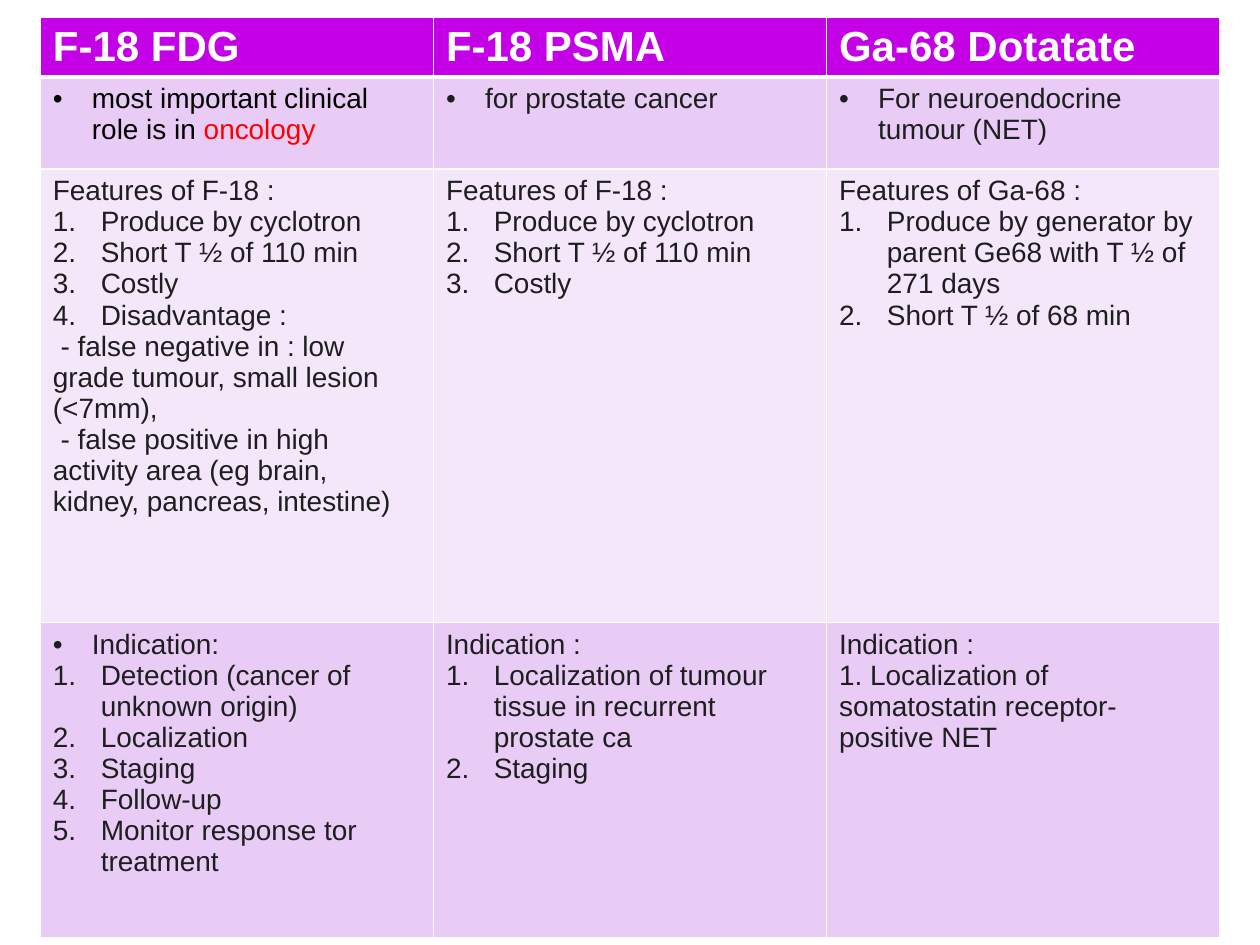
import pptx
import pptx.dml.color
import pptx.enum.text
import pptx.oxml.ns
import pptx.util
from lxml import etree

Inches = pptx.util.Inches
Pt = pptx.util.Pt
RGBColor = pptx.dml.color.RGBColor

WHITE = RGBColor(0xFF, 0xFF, 0xFF)
BLACK = RGBColor(0, 0, 0)
RED = RGBColor(0xFF, 0, 0)
INK = RGBColor(0x1E, 0x1E, 0x20)
PURPLE = RGBColor(0xC3, 0x00, 0xE6)
LILAC = RGBColor(0xE9, 0xCC, 0xF5)
PALE_LILAC = RGBColor(0xF5, 0xE7, 0xFA)

COLUMN_WIDTH = Inches(3.12)
ROW_HEIGHTS = [Inches(height) for height in (0.46, 0.73, 3.6, 2.5)]
ROW_FILLS = [PURPLE, LILAC, PALE_LILAC, LILAC]
MARKERS = {
    "bullet": (Inches(0.31), "buChar", {"char": "•"}),
    "number": (Inches(0.38), "buAutoNum", {"type": "arabicPeriod"}),
}

TRACERS = ["F-18 FDG", "F-18 PSMA", "Ga-68 Dotatate"]
F18_FEATURES = [
    ("plain", "Features of F-18 :"),
    ("number", "Produce by cyclotron"),
    ("number", "Short T ½ of 110 min"),
    ("number", "Costly"),
]
ROLES = [
    [("bullet", [("most important clinical role is in ", BLACK), ("oncology", RED)])],
    [("bullet", "for prostate cancer")],
    [("bullet", "For neuroendocrine tumour (NET)")],
]
FEATURES = [
    F18_FEATURES + [
        ("number", "Disadvantage :"),
        ("plain", " - false negative in : low grade tumour, small lesion (<7mm),"),
        ("plain", " - false positive in high activity area "
                  "(eg brain, kidney, pancreas, intestine)"),
    ],
    F18_FEATURES,
    [
        ("plain", "Features of Ga-68 :"),
        ("number", "Produce by generator by parent Ge68 with T ½ of 271 days"),
        ("number", "Short T ½ of 68 min"),
    ],
]
INDICATIONS = [
    [
        ("bullet", "Indication:"),
        ("number", "Detection (cancer of unknown origin)"),
        ("number", "Localization"),
        ("number", "Staging"),
        ("number", "Follow-up"),
        ("number", "Monitor response tor treatment"),
    ],
    [
        ("plain", "Indication :"),
        ("number", "Localization of tumour tissue in recurrent prostate ca"),
        ("number", "Staging"),
    ],
    [
        ("plain", "Indication :"),
        ("plain", "1. Localization of somatostatin receptor-positive NET"),
    ],
]


def add_child(parent, tag, **attributes):
    """Append a DrawingML element to a parent element."""
    return etree.SubElement(parent, pptx.oxml.ns.qn(f"a:{tag}"), attributes)


def set_marker(paragraph, marker):
    """Give a paragraph a bullet or number with a hanging indent."""
    indent, tag, attributes = MARKERS[marker]
    properties = paragraph._p.get_or_add_pPr()
    properties.set("marL", str(indent))
    properties.set("indent", str(-indent))
    add_child(properties, "buFont", typeface="Arial")
    add_child(properties, tag, **attributes)


def write_text(paragraph, text, size=16, color=INK, bold=False, marker="plain"):
    """Write a string or a list of coloured parts into a paragraph."""
    if marker in MARKERS:
        set_marker(paragraph, marker)
    paragraph.alignment = pptx.enum.text.PP_ALIGN.LEFT
    parts = [(text, color)] if isinstance(text, str) else text
    for wording, part_color in parts:
        run = paragraph.add_run()
        run.text = wording
        run.font.name = "Arial"
        run.font.size = Pt(size)
        run.font.bold = bold
        run.font.color.rgb = part_color


def style_cell(cell, fill, bottom_width):
    """Set the borders and fill of a table cell."""
    properties = cell._tc.get_or_add_tcPr()
    for side, width in (("L", 1), ("R", 1), ("T", 1), ("B", bottom_width)):
        border = add_child(properties, f"ln{side}", w=str(Pt(width)))
        add_child(add_child(border, "solidFill"), "srgbClr", val=str(WHITE))
    cell.fill.solid()
    cell.fill.fore_color.rgb = fill


def fill_cell(cell, lines, **text_format):
    """Write each marked line as a paragraph of a cell."""
    for index, (marker, text) in enumerate(lines):
        frame = cell.text_frame
        paragraph = frame.add_paragraph() if index else frame.paragraphs[0]
        write_text(paragraph, text, marker=marker, **text_format)


def add_tracer_table(slide):
    """Add the comparison table of the three tracers."""
    headings = [[("plain", tracer)] for tracer in TRACERS]
    content = [headings, ROLES, FEATURES, INDICATIONS]
    table = slide.shapes.add_table(
        len(content), len(TRACERS), Inches(0.32), Inches(0.14),
        COLUMN_WIDTH * len(TRACERS), sum(ROW_HEIGHTS),
    ).table
    for column in table.columns:
        column.width = COLUMN_WIDTH
    for row_index, row_content in enumerate(content):
        is_heading = row_index == 0
        text_format = {"size": 24, "color": WHITE, "bold": True} if is_heading else {}
        table.rows[row_index].height = ROW_HEIGHTS[row_index]
        for column_index, lines in enumerate(row_content):
            cell = table.cell(row_index, column_index)
            style_cell(cell, ROW_FILLS[row_index], 3 if is_heading else 1)
            fill_cell(cell, lines, **text_format)


def main():
    """Build and save the tracer comparison slide."""
    presentation = pptx.Presentation()
    presentation.slide_width = Inches(10)
    presentation.slide_height = Inches(7.5)
    slide = presentation.slides.add_slide(presentation.slide_layouts[6])
    add_tracer_table(slide)
    presentation.save("out.pptx")


if __name__ == "__main__":
    main()
